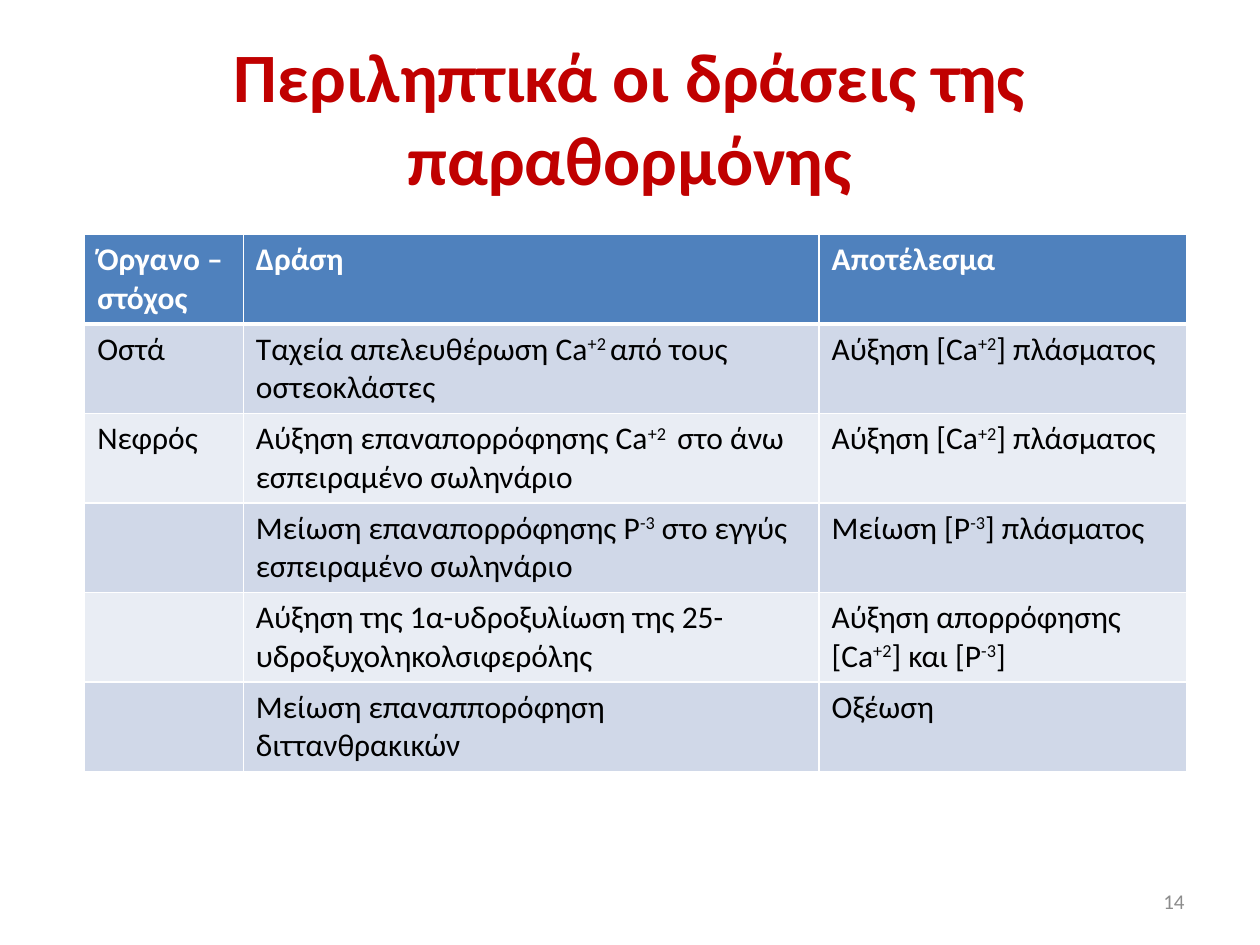
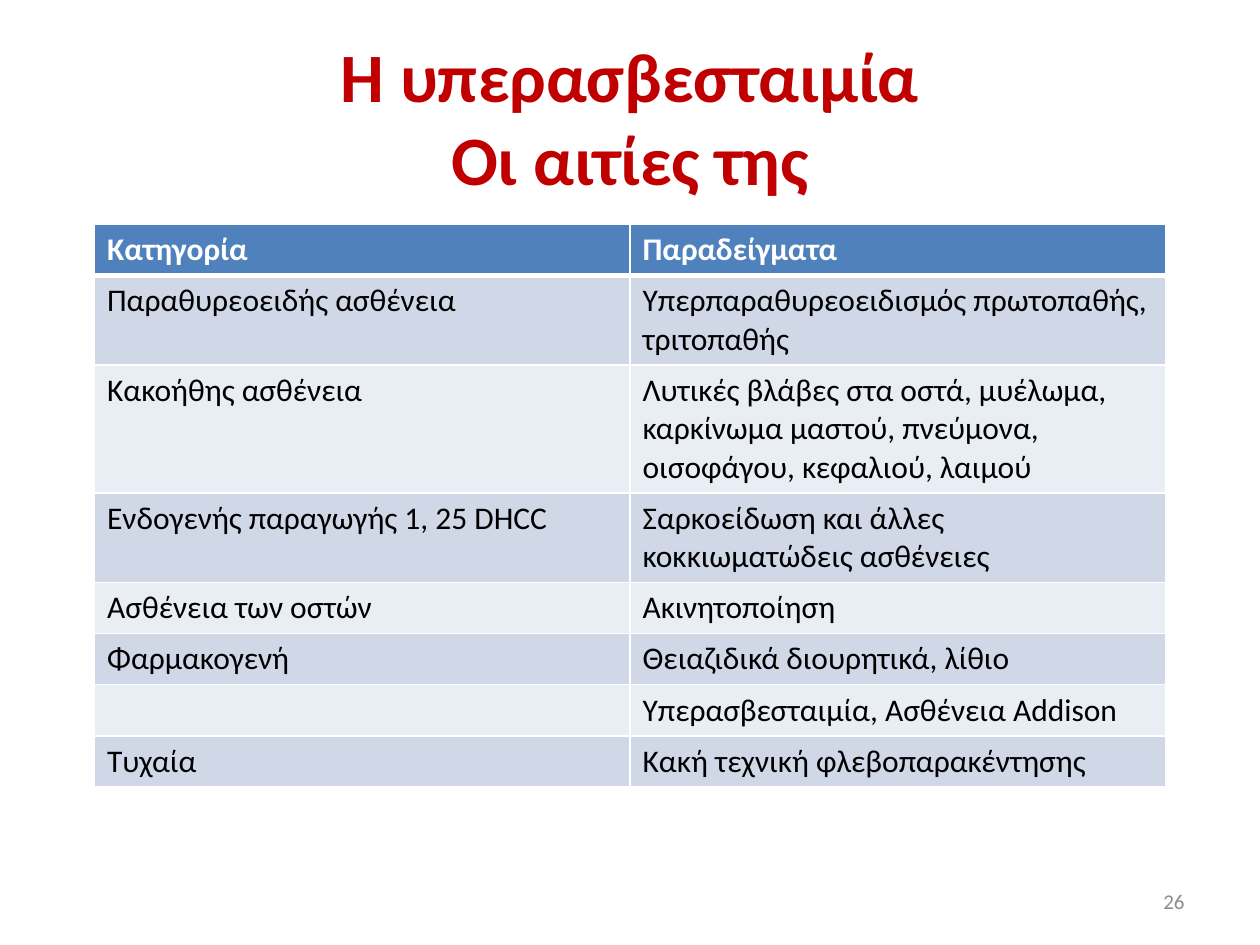
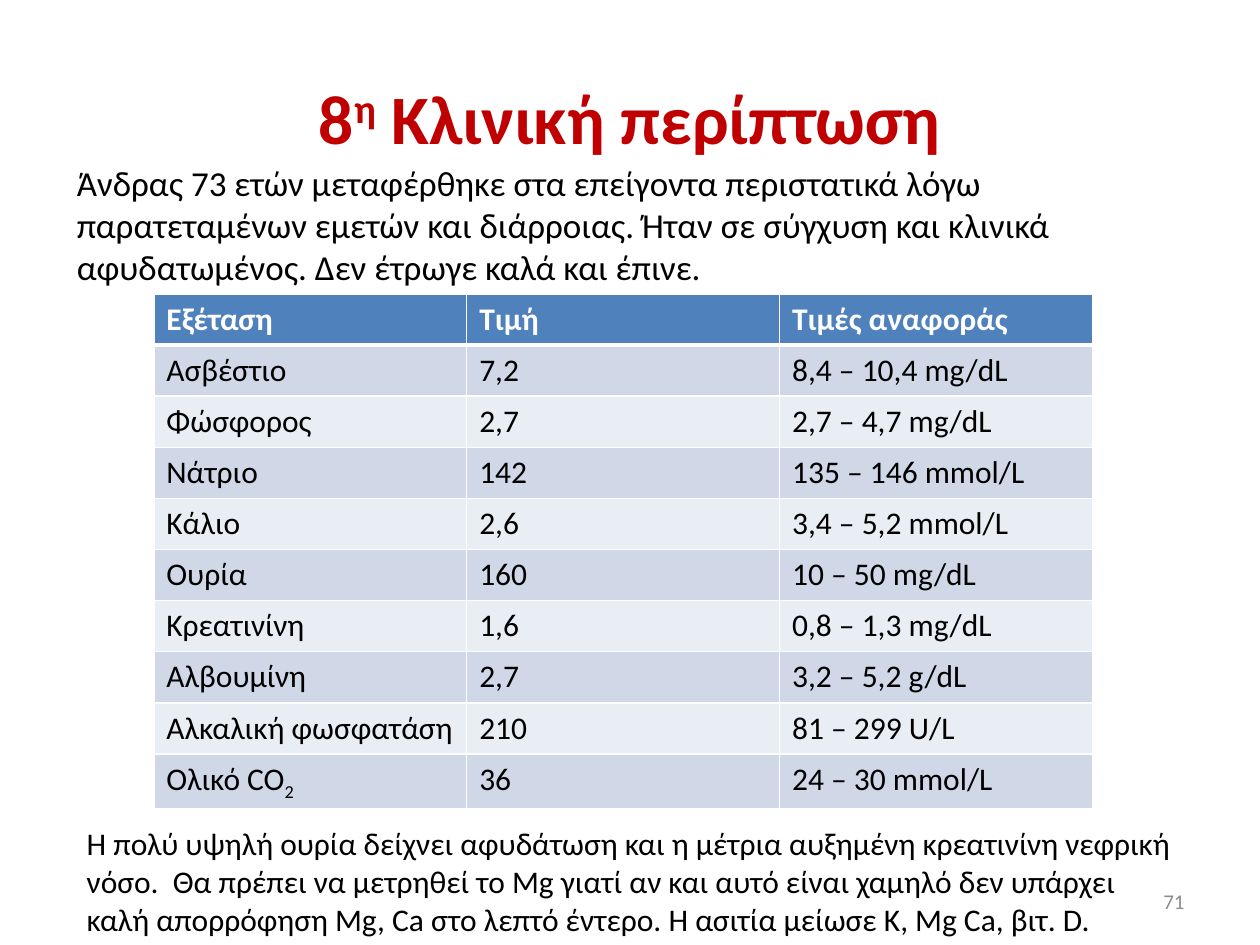
from lxml import etree
from pptx import Presentation
from pptx import util as u
from pptx.dml.color import RGBColor
from pptx.enum import text as t
from pptx.oxml.ns import qn

Pt = u.Pt
HUES = {"title": "C00000", "head": "4F81BD", "odd": "D0D8E8", "even": "E9EDF4",
        "white": "FFFFFF", "black": "000000", "grey": "8C8C8C"}
FORMS = {
    "title": {"size": Pt(39.6), "bold": True, "hue": "title"},
    "body": {"size": Pt(20), "bold": False, "hue": "black"},
    "head": {"size": Pt(18), "bold": True, "hue": "white"},
    "cell": {"size": Pt(18), "bold": False, "hue": "black"},
    "page": {"size": Pt(12), "bold": False, "hue": "grey"},
}
BASES = {"^": "30000", "~": "-25000"}
ROW = 29.2


class Deck:
    def __init__(self):
        self.show = Presentation()
        self.show.slide_width, self.show.slide_height = Pt(720), Pt(540)
        self.slide = None

    def start(self, title, page, body=False):
        self.slide = self.show.slides.add_slide(self.show.slide_layouts[1 if body else 5])
        shape = self.slide.shapes.title
        self.place(shape, 36, 21.6, 648, 90)
        self.frame(shape.text_frame, title, "title", "CENTER", "MIDDLE")
        self.note(str(page), (516, 500.5, 168, 28.8), "page", "RIGHT", "MIDDLE")

    def place(self, shape, *box):
        for key, val in zip(("left", "top", "width", "height"), box):
            setattr(shape, key, Pt(val))

    def frame(self, frame, words, form, align="LEFT", anchor="TOP"):
        look = {"word_wrap": True, "auto_size": t.MSO_AUTO_SIZE.NONE,
                "vertical_anchor": t.MSO_ANCHOR[anchor]}
        for key, val in look.items():
            setattr(frame, key, val)
        self.lines(frame, words, form, align)

    def lines(self, frame, words, form, align="LEFT"):
        for num, line in enumerate(words.split("\n")):
            para = frame.add_paragraph() if num else frame.paragraphs[0]
            para.alignment = t.PP_ALIGN[align]
            for piece in filter(None, line.split("|")):
                self.piece(para, piece, form)

    def piece(self, para, piece, form):
        part = para.add_run()
        base = BASES.get(piece[0])
        part.text = piece[1:] if base else piece
        part.font.name = "Calibri"
        for key, val in FORMS[form].items():
            if key == "hue":
                part.font.color.rgb = RGBColor.from_string(HUES[val])
            else:
                setattr(part.font, key, val)
        if base:
            part._r.get_or_add_rPr().set("baseline", base)

    def note(self, words, box, form, align="LEFT", anchor="TOP"):
        shape = self.slide.shapes.add_textbox(*map(Pt, box))
        self.frame(shape.text_frame, words, form, align, anchor)

    def body(self, words, box):
        shape = self.slide.placeholders[1]
        self.place(shape, *box)
        self.frame(shape.text_frame, words, "body")
        para = shape.text_frame.paragraphs[0]
        para.space_before = Pt(4)
        props = para._p.get_or_add_pPr()
        for key in ("marL", "indent"):
            props.set(key, "0")
        etree.SubElement(props, qn("a:buNone"))

    def edge(self, cell, row):
        props = cell._tc.get_or_add_tcPr()
        wide = {"L": 1, "R": 1, "T": 3 if row == 1 else 1, "B": 1 if row else 3}
        for side, width in wide.items():
            line = etree.SubElement(props, qn("a:ln" + side), w=str(Pt(width)))
            paint = etree.SubElement(line, qn("a:solidFill"))
            etree.SubElement(paint, qn("a:srgbClr"), val=HUES["white"])

    def table(self, left, top, widths, rows):
        frame = self.slide.shapes.add_table(
            len(rows), len(widths), Pt(left), Pt(top), Pt(sum(widths)), Pt(ROW * len(rows)))
        grid = frame.table
        for col, width in zip(grid.columns, widths):
            col.width = Pt(width)
        for r, words in enumerate(rows):
            grid.rows[r].height = Pt(ROW)
            tone = ("odd" if r % 2 else "even") if r else "head"
            for c, word in enumerate(words):
                cell = grid.cell(r, c)
                self.edge(cell, r)
                cell.fill.solid()
                cell.fill.fore_color.rgb = RGBColor.from_string(HUES[tone])
                self.lines(cell.text_frame, word, "cell" if r else "head")


ACTS = [
    ("Όργανο – στόχος", "Δράση", "Αποτέλεσμα"),
    ("Οστά", "Ταχεία απελευθέρωση Ca|^+2 |από τους οστεοκλάστες",
     "Αύξηση [Ca|^+2|] πλάσματος"),
    ("Νεφρός", "Αύξηση επαναπορρόφησης Ca|^+2 | στο άνω εσπειραμένο σωληνάριο",
     "Αύξηση [Ca|^+2|] πλάσματος"),
    ("", "Μείωση επαναπορρόφησης P|^-3| στο εγγύς εσπειραμένο σωληνάριο",
     "Μείωση [P|^-3|] πλάσματος"),
    ("", "Αύξηση της 1α-υδροξυλίωση της 25-υδροξυχοληκολσιφερόλης",
     "Αύξηση απορρόφησης [Ca|^+2|] και [P|^-3|]"),
    ("", "Μείωση επαναππορόφηση διττανθρακικών", "Οξέωση"),
]
CAUSES = [
    ("Κατηγορία", "Παραδείγματα"),
    ("Παραθυρεοειδής ασθένεια", "Υπερπαραθυρεοειδισμός πρωτοπαθής, τριτοπαθής"),
    ("Κακοήθης ασθένεια",
     "Λυτικές βλάβες στα οστά, μυέλωμα, καρκίνωμα μαστού, πνεύμονα, οισοφάγου, κεφαλιού, λαιμού"),
    ("Ενδογενής παραγωγής 1, 25 DHCC", "Σαρκοείδωση και άλλες κοκκιωματώδεις ασθένειες"),
    ("Ασθένεια των οστών", "Ακινητοποίηση"),
    ("Φαρμακογενή", "Θειαζιδικά διουρητικά, λίθιο"),
    ("", "Υπερασβεσταιμία, Ασθένεια Addison"),
    ("Τυχαία", "Κακή τεχνική φλεβοπαρακέντησης"),
]
TESTS = [
    ("Εξέταση", "Τιμή", "Τιμές αναφοράς"),
    ("Ασβέστιο", "7,2", "8,4 – 10,4 mg/dL"),
    ("Φώσφορος", "2,7", "2,7 – 4,7 mg/dL"),
    ("Νάτριο", "142", "135 – 146 mmol/L"),
    ("Κάλιο", "2,6", "3,4 – 5,2 mmol/L"),
    ("Ουρία", "160", "10 – 50 mg/dL"),
    ("Κρεατινίνη", "1,6", "0,8 – 1,3 mg/dL"),
    ("Αλβουμίνη", "2,7", "3,2 – 5,2 g/dL"),
    ("Αλκαλική φωσφατάση", "210", "81 – 299 U/L"),
    ("Ολικό CO|~2", "36", "24 – 30 mmol/L"),
]
CASE = ("Άνδρας 73 ετών μεταφέρθηκε στα επείγοντα περιστατικά λόγω παρατεταμένων εμετών "
        "και διάρροιας. Ήταν σε σύγχυση και κλινικά αφυδατωμένος. Δεν έτρωγε καλά και έπινε.")
VERDICT = ("Η πολύ υψηλή ουρία δείχνει αφυδάτωση και η μέτρια αυξημένη κρεατινίνη νεφρική νόσο.  "
           "Θα πρέπει να μετρηθεί το Mg γιατί αν και αυτό είναι χαμηλό δεν υπάρχει καλή "
           "απορρόφηση Mg, Ca στο λεπτό έντερο. Η ασιτία μείωσε K, Mg Ca, βιτ. D.")


def main():
    deck = Deck()
    deck.start("Περιληπτικά οι δράσεις της παραθορμόνης", 14)
    deck.table(48.4, 134, [90.7, 329, 210], ACTS)

    deck.start("H υπερασβεσταιμία\nΟι αιτίες της", 26)
    deck.table(54, 128.2, [306] * 2, CAUSES)

    deck.start("8|^η| Κλινική περίπτωση", 71, body=True)
    deck.body(CASE, (36.7, 88.6, 663, 356.4))
    deck.table(87.9, 168, [178.8] * 3, TESTS)
    deck.note(VERDICT, (42.5, 467.3, 640.8, 72.7), "cell")
    deck.show.save("out.pptx")


if __name__ == "__main__":
    main()
